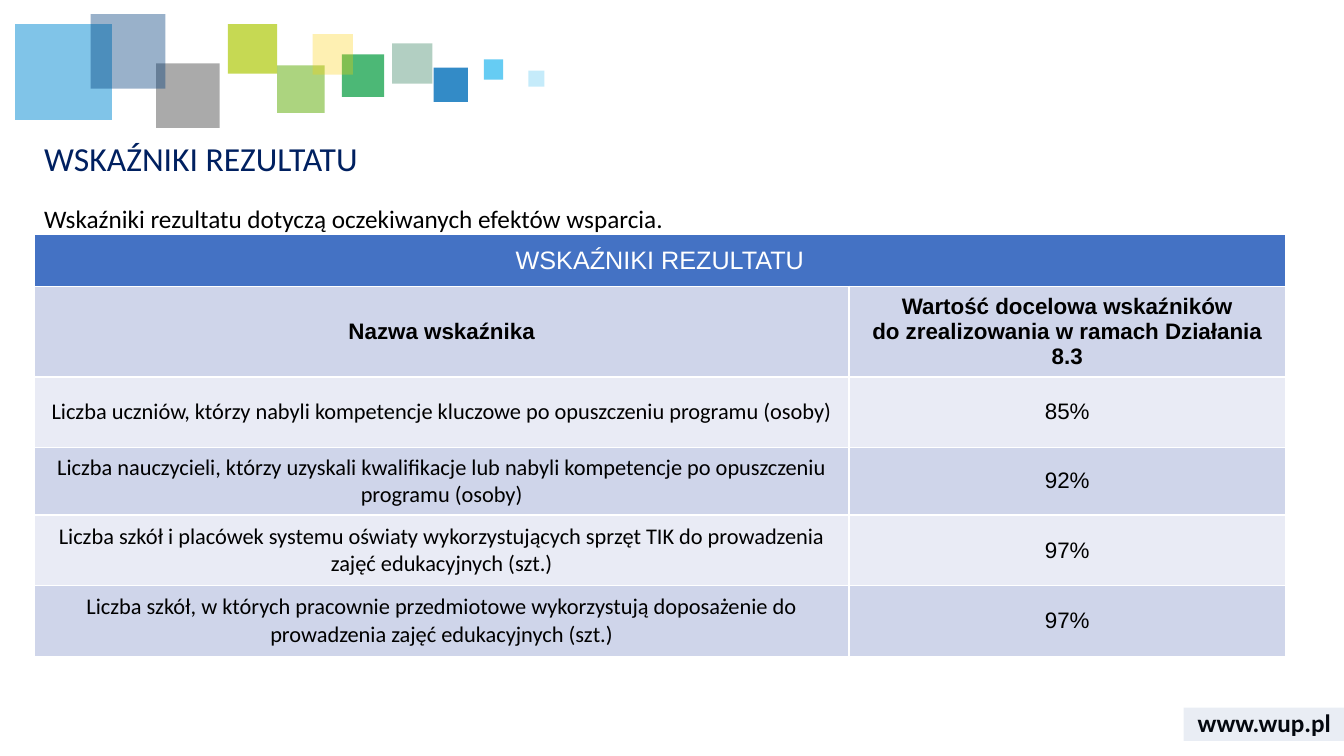
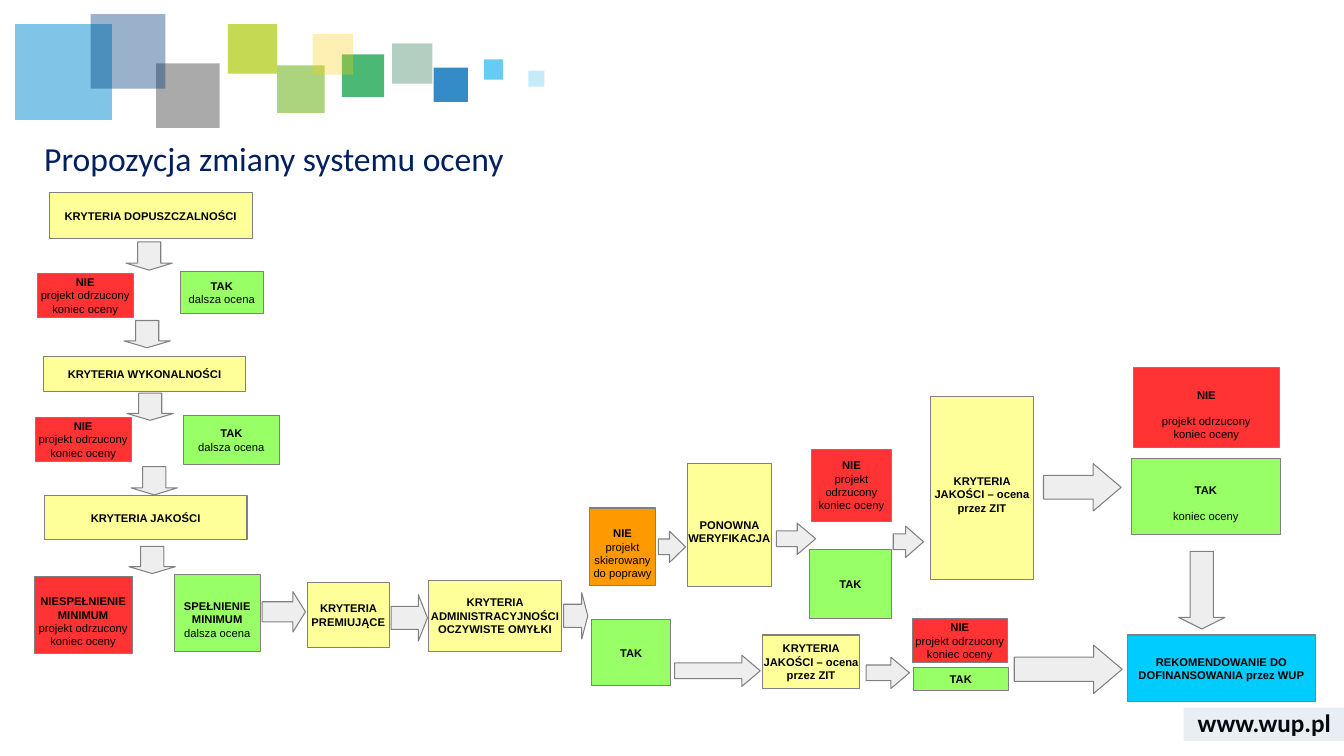
from lxml.etree import SubElement
from pptx import Presentation
from pptx.dml.color import RGBColor
from pptx.enum.shapes import MSO_SHAPE as Preset
from pptx.enum.text import MSO_ANCHOR as Anchor, PP_ALIGN as Align
from pptx.oxml.ns import qn
from pptx.util import Pt

PX = 9144  # 100 px to the inch
rgb = RGBColor.from_string

BLACK, WHITE, NAVY = "000000", "FFFFFF", "002060"
YELLOW, RED, GREEN, ORANGE, CYAN = "FFFF99", "FF3333", "99FF66", "FF9900", "00CCFF"
ARROW_GRAY, OUTLINE = "EEEEEE", "808080"
HEADER_BLUE, BAND_DARK, BAND_LIGHT = "4472C4", "CFD5EA", "E9EBF5"


def add_block(slide, preset, box, fill, outline=None, opacity=100):
    block = slide.shapes.add_shape(preset, *(v * PX for v in box))
    block.shadow.inherit = False
    block.fill.solid()
    block.fill.fore_color.rgb = rgb(fill)
    if opacity < 100:
        color = block.element.spPr.find(".//" + qn("a:srgbClr"))
        SubElement(color, qn("a:alpha"), val=str(opacity * 1000))
    if outline:
        block.line.color.rgb = rgb(outline)
        block.line.width = Pt(0.75)
    else:
        block.line.fill.background()
    return block


def write(frame, text, size, font, color=BLACK, bold_lines=0, align=Align.CENTER, spacing=1.0):
    """Fill a text frame; the first bold_lines paragraphs are bold."""
    frame.word_wrap = True
    frame.text = text
    for number, paragraph in enumerate(frame.paragraphs):
        paragraph.alignment = align
        paragraph.line_spacing = spacing
        for run in paragraph.runs:
            run.font.size = Pt(size)
            run.font.name = font
            run.font.bold = number < bold_lines
            run.font.color.rgb = rgb(color)


prs = Presentation()
prs.slide_width, prs.slide_height = 1333 * PX, 750 * PX

# Shared parts: band of squares, title, footer
squares = [
    ((389, 43, 40, 40), "006138", 30),
    ((430, 67, 34, 34), "006EB9", 80),
    ((339, 54, 42, 42), "009A3C", 70),
    ((15, 24, 96, 95), "028BD3", 50),
    ((275, 65, 47, 47), "75B82A", 60),
    ((155, 63, 63, 64), "575757", 50),
    ((90, 14, 74, 74), "003D7C", 40),
    ((480, 59, 19, 20), "40C0F1", 80),
    ((226, 24, 49, 49), "AFCA0B", 70),
    ((310, 34, 40, 40), "FED000", 30),
    ((524, 70, 16, 16), "40C0F1", 30),
]
slides = []
for title in ("WSKAŹNIKI REZULTATU", "Propozycja zmiany systemu oceny"):
    slide = prs.slides.add_slide(prs.slide_layouts[6])
    footer = slide.shapes.add_textbox(*(v * PX for v in (1174, 697, 160, 40)))
    write(footer.text_frame, "www.wup.pl", 18, "Calibri", bold_lines=1)
    footer.text_frame.vertical_anchor = Anchor.MIDDLE
    for box, fill, opacity in squares:
        add_block(slide, Preset.RECTANGLE, box, fill, opacity=opacity)
    add_block(slide, Preset.RECTANGLE, (1174, 702, 160, 33), "2F5597", opacity=10)
    heading = slide.shapes.add_textbox(*(v * PX for v in (34, 136, 1241, 55)))
    write(heading.text_frame, title, 24, "Calibri", NAVY, align=Align.LEFT, spacing=0.9)
    slides.append(slide)
indicators_slide, process_slide = slides

# Slide 1: result indicators
intro = indicators_slide.shapes.add_textbox(*(v * PX for v in (34, 200, 1241, 40)))
write(intro.text_frame, "Wskaźniki rezultatu dotyczą oczekiwanych efektów wsparcia.",
      18, "Calibri", align=Align.LEFT, spacing=0.9)

indicators = [
    ("WSKAŹNIKI REZULTATU", ""),
    ("Nazwa wskaźnika",
     "Wartość docelowa wskaźników\vdo zrealizowania w ramach Działania 8.3"),
    ("Liczba uczniów, którzy nabyli kompetencje kluczowe po opuszczeniu programu (osoby)", "85%"),
    ("Liczba nauczycieli, którzy uzyskali kwalifikacje lub nabyli kompetencje "
     "po opuszczeniu programu (osoby)", "92%"),
    ("Liczba szkół i placówek systemu oświaty wykorzystujących sprzęt TIK "
     "do prowadzenia zajęć edukacyjnych (szt.)", "97%"),
    ("Liczba szkół, w których pracownie przedmiotowe wykorzystują doposażenie "
     "do prowadzenia zajęć edukacyjnych (szt.)", "97%"),
]
table = indicators_slide.shapes.add_table(
    len(indicators), 2, *(v * PX for v in (34, 233, 1241, 391))).table
for column, width in zip(table.columns, (808, 433)):
    column.width = width * PX
for row, height in zip(table.rows, (51, 63, 70, 67, 70, 70)):
    row.height = height * PX
table.cell(0, 0).merge(table.cell(0, 1))

for r, texts in enumerate(indicators):
    for c, text in enumerate(texts):
        cell = table.cell(r, c)
        cell.vertical_anchor = Anchor.MIDDLE
        for side in ("a:lnL", "a:lnR", "a:lnT", "a:lnB"):
            border = SubElement(cell._tc.get_or_add_tcPr(), qn(side), w=str(Pt(1)))
            SubElement(SubElement(border, qn("a:solidFill")), qn("a:srgbClr"), val=WHITE)
        cell.fill.solid()
        band = BAND_DARK if r % 2 else BAND_LIGHT
        cell.fill.fore_color.rgb = rgb(band if r else HEADER_BLUE)
        if text:
            write(cell.text_frame, text, 16 if r else 18,
                  "Calibri" if r > 1 and c == 0 else "Arial",
                  BLACK if r else WHITE, bold_lines=int(r == 1))

# Slide 2: assessment process
rejected = "NIE\nprojekt odrzucony\nkoniec oceny"
passed = "TAK\ndalsza ocena"
zit_quality = "KRYTERIA JAKOŚCI – ocena przez ZIT"

# box, fill, text, bold lines, top inset in px, gap in pt under the first line
steps = [
    ((49, 191, 201, 46), YELLOW, "KRYTERIA DOPUSZCZALNOŚCI", 1, 0, 0),
    ((37, 271, 95, 44), RED, rejected, 1, 0, 0),
    ((179, 269, 82, 42), GREEN, passed, 1, 0, 0),
    ((43, 354, 201, 34), YELLOW, "KRYTERIA WYKONALNOŚCI", 1, 0, 0),
    ((35, 414, 95, 44), RED, rejected, 1, 0, 0),
    ((182, 412, 95, 49), GREEN, passed, 1, 0, 0),
    ((44, 492, 201, 43), YELLOW, "KRYTERIA JAKOŚCI", 1, 0, 0),
    ((34, 572, 97, 76), RED, "NIESPEŁNIENIE MINIMUM\nprojekt odrzucony\nkoniec oceny", 1, 13, 0),
    ((173, 570, 85, 76), GREEN, "SPEŁNIENIE\nMINIMUM\ndalsza ocena", 2, 13, 0),
    ((305, 578, 81, 64), YELLOW, "KRYTERIA PREMIUJĄCE", 1, 0, 0),
    ((425, 576, 132, 70), YELLOW, "KRYTERIA ADMINISTRACYJNOŚCI\nOCZYWISTE OMYŁKI", 2, 0, 0),
    ((587, 615, 78, 65), GREEN, "TAK", 1, 0, 0),
    ((585, 504, 65, 77), ORANGE, "NIE\nprojekt skierowany\ndo poprawy", 1, 13, 0),
    ((682, 460, 83, 122), YELLOW, "PONOWNA WERYFIKACJA", 1, 13, 0),
    ((805, 446, 79, 71), RED, rejected, 1, 0, 0),
    ((803, 545, 81, 69), GREEN, "TAK", 1, 0, 0),
    ((923, 393, 102, 182), YELLOW, zit_quality, 1, 13, 0),
    ((1124, 365, 145, 79), RED, rejected, 1, 13, 9),
    ((1122, 455, 148, 75), GREEN, "TAK\nkoniec oceny", 1, 13, 9),
    ((756, 630, 97, 53), YELLOW, zit_quality, 1, 0, 0),
    ((905, 614, 94, 43), RED, rejected, 1, 0, 0),
    ((906, 662, 94, 23), GREEN, "TAK", 1, 0, 0),
    ((1118, 630, 187, 66), CYAN, "REKOMENDOWANIE DO DOFINANSOWANIA przez WUP", 1, 0, 0),
]
for box, fill, text, bold_lines, inset, gap in steps:
    frame = add_block(process_slide, Preset.RECTANGLE, box, fill, OUTLINE).text_frame
    frame.margin_left = frame.margin_right = frame.margin_bottom = 0
    frame.margin_top = inset * PX
    frame.vertical_anchor = Anchor.MIDDLE
    write(frame, text, 8, "Arial", bold_lines=bold_lines)
    if gap:
        frame.paragraphs[1].space_before = Pt(gap)

# box, length of the arrowhead relative to the shorter side
down_arrows = [
    ((125, 240, 46, 28), 0.25),
    ((123, 318, 46, 27), 0.25),
    ((126, 390, 46, 27), 0.25),
    ((130, 463, 46, 28), 0.25),
    ((128, 542, 46, 27), 0.25),
    ((1169, 547, 46, 77), 0.25),
]
right_arrows = [
    ((260, 587, 43, 40), 0.31),
    ((388, 590, 36, 46), 0.25),
    ((559, 588, 24, 46), 0.25),
    ((653, 527, 27, 31), 0.59),
    ((770, 519, 39, 31), 0.59),
    ((886, 522, 30, 31), 0.59),
    ((1035, 460, 77, 47), 0.59),
    ((669, 650, 85, 31), 0.59),
    ((859, 652, 43, 31), 0.59),
    ((1006, 640, 107, 48), 0.59),
]
for preset, arrows in ((Preset.DOWN_ARROW, down_arrows), (Preset.RIGHT_ARROW, right_arrows)):
    for box, head in arrows:
        arrow = add_block(process_slide, preset, box, ARROW_GRAY, OUTLINE)
        arrow.adjustments[0] = 0.5
        arrow.adjustments[1] = head

prs.save("out.pptx")
